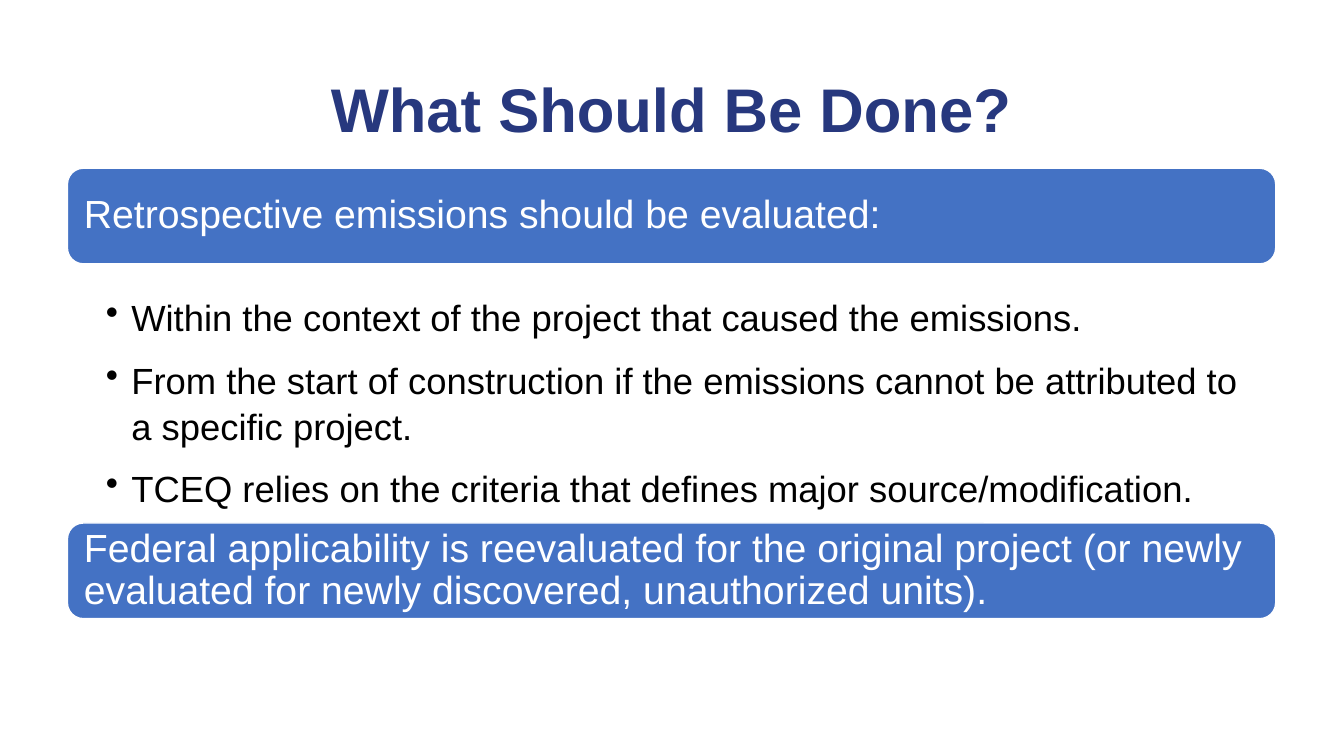
from pptx import Presentation
from pptx.dml.color import RGBColor as RGB
from pptx.enum.shapes import MSO_SHAPE as Form
from pptx.enum.text import MSO_ANCHOR as Anchor, PP_ALIGN as Align
from pptx.util import Cm, Pt
from lxml.etree import SubElement as Sub

HUES = {"navy": "27387E", "blue": "4472C4", "white": "FFFFFF", "black": "000000"}
NS = "{http://schemas.openxmlformats.org/drawingml/2006/main}"
LEFT, WIDE = 1.7, 30.45


def hue(name):
    return RGB.from_string(HUES[name])


class Deck:
    """Holds the text styles and the current slide."""

    styles = {
        "title": {"size": Pt(44), "bold": True, "hue": "navy"},
        "bar": {"size": Pt(28), "bold": False, "hue": "white"},
        "list": {"size": Pt(26), "bold": False, "hue": "black"},
    }

    def __init__(self):
        self.show = Presentation()
        self.show.slide_width, self.show.slide_height = Cm(33.87), Cm(19.05)
        self.slide = self.show.slides.add_slide(self.show.slide_layouts[5])

    def style(self, font, kind):
        font.name = "Arial"
        for key, val in self.styles[kind].items():
            if key == "hue":
                font.color.rgb = hue(val)
            else:
                setattr(font, key, val)

    def frame(self, shape, anchor, pads):
        frame = shape.text_frame
        frame.word_wrap = True
        frame.vertical_anchor = anchor
        for side, pad in zip(("left", "top", "right", "bottom"), pads):
            setattr(frame, f"margin_{side}", Cm(pad))
        return frame

    def line(self, par, text, kind, **form):
        par.text = text
        for key, val in form.items():
            setattr(par, key, val)
        self.style(par.font, kind)

    def title(self, text, top, high):
        shape = self.slide.shapes.title
        box = {"left": LEFT, "top": top, "width": WIDE, "height": high}
        for key, val in box.items():
            setattr(shape, key, Cm(val))
        frame = self.frame(shape, Anchor.TOP, (0.25, 0.13, 0.25, 0.13))
        self.line(frame.paragraphs[0], text, "title",
                  alignment=Align.CENTER, line_spacing=0.9)

    def bar(self, text, top, high=2.41):
        shape = self.slide.shapes.add_shape(
            Form.ROUNDED_RECTANGLE, Cm(LEFT), Cm(top), Cm(WIDE), Cm(high))
        shape.shadow.inherit = False
        shape.fill.solid()
        shape.fill.fore_color.rgb = hue("blue")
        shape.line.color.rgb = hue("white")
        shape.line.width = Pt(1)
        frame = self.frame(shape, Anchor.MIDDLE, (0.3,) * 4)
        self.line(frame.paragraphs[0], text, "bar",
                  alignment=Align.LEFT, line_spacing=0.9)

    def bullets(self, items, top, high):
        shape = self.slide.shapes.add_textbox(Cm(LEFT), Cm(top), Cm(WIDE), Cm(high))
        frame = self.frame(shape, Anchor.TOP, (0.97, 0.1, 0.5, 0.1))
        for num, item in enumerate(items):
            par = frame.add_paragraph() if num else frame.paragraphs[0]
            # Bullet with a hanging indent
            props = par._p.get_or_add_pPr()
            props.set("marL", str(Cm(0.64)))
            props.set("indent", str(-Cm(0.64)))
            Sub(props, NS + "buChar", char="•")
            self.line(par, item, "list", space_after=Pt(12), line_spacing=1.05)


def main():
    deck = Deck()

    # Heading
    deck.title("What Should Be Done?", 1.88, 3.68)

    # First statement and its points
    deck.bar("Retrospective emissions should be evaluated:", 4.24)
    deck.bullets((
        "Within the context of the project that caused the emissions.",
        "From the start of construction if the emissions cannot be "
        "attributed to a specific project.",
        "TCEQ relies on the criteria that defines major source/modification.",
    ), 7.29, 6.5)

    # Second statement
    deck.bar("Federal applicability is reevaluated for the original project "
             "(or newly evaluated for newly discovered, unauthorized units).", 13.18)

    deck.show.save("out.pptx")


if __name__ == "__main__":
    main()
